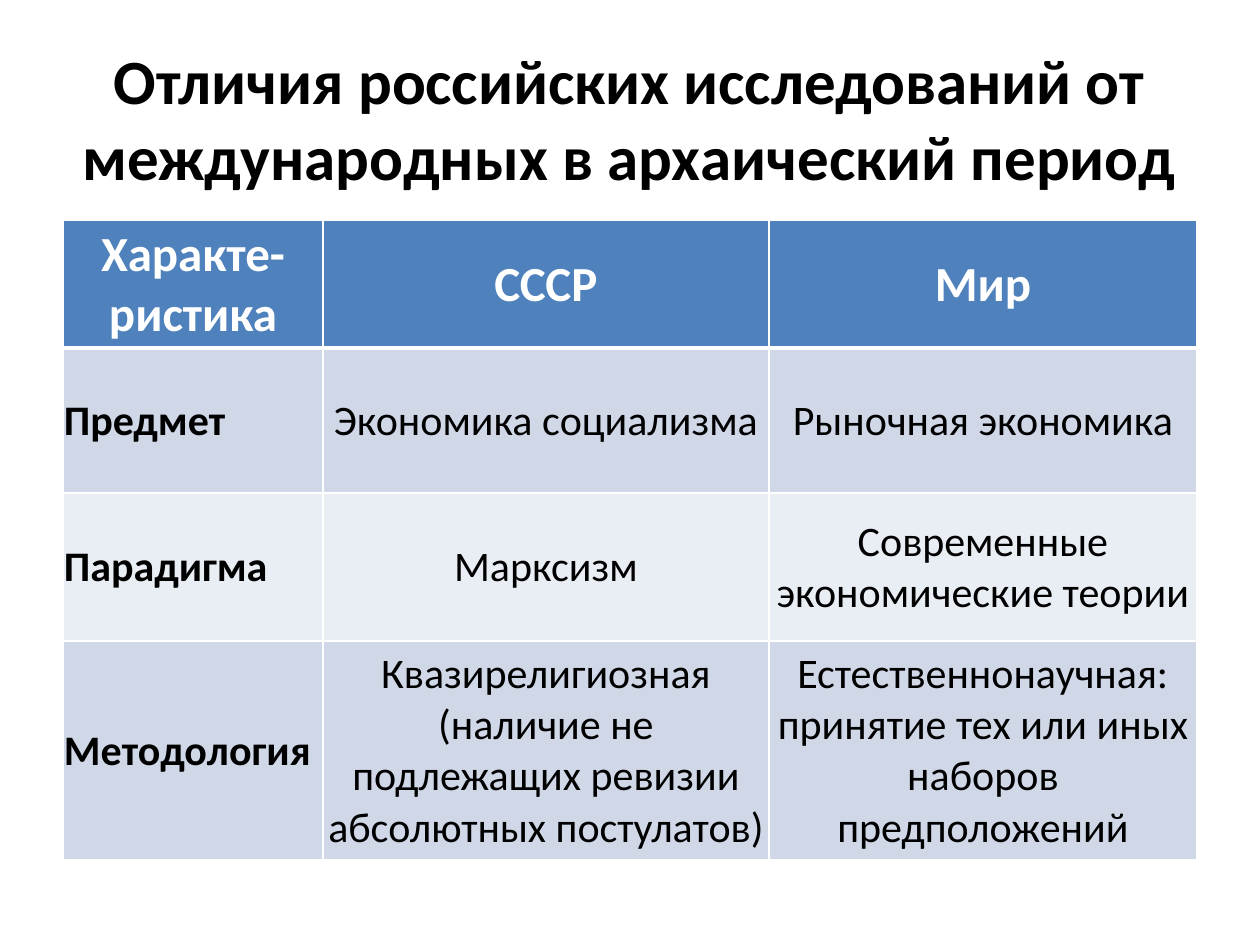
from dataclasses import dataclass

from lxml import etree
from pptx import Presentation
from pptx import util as u
from pptx.dml.color import RGBColor
from pptx.enum import text as t
from pptx.oxml import ns

DPI = 126


@dataclass(frozen=True)
class Theme:
    font: str = "Calibri"
    white: str = "FFFFFF"
    black: str = "000000"
    head: str = "4F81BD"
    odd: str = "D0D8E8"
    even: str = "E9EDF4"
    title: int = 36
    top: int = 28
    body: int = 24


@dataclass(frozen=True)
class Row:
    height: int
    texts: tuple[str, ...]


THEME = Theme()
TITLE = "Отличия российских исследований от международных в архаический период"
COLS = (260, 446, 428)
ROWS = (
    Row(128, ("Характе-ристика", "СССР", "Мир")),
    Row(145, ("Предмет", "Экономика социализма", "Рыночная экономика")),
    Row(148, ("Парадигма", "Марксизм", "Современные экономические теории")),
    Row(219, (
        "Методология",
        "Квазирелигиозная (наличие не подлежащих ревизии абсолютных постулатов)",
        "Естественнонаучная: принятие тех или иных наборов предположений",
    )),
)


def px(num: int) -> u.Emu:
    return u.Emu(round(num * 914400 / DPI))


def write(frame, words: str, *, size: int, color: str = THEME.black,
          bold: bool = False, center: bool = True) -> None:
    frame.word_wrap = True
    para = frame.paragraphs[0]
    para.alignment = t.PP_ALIGN.CENTER if center else t.PP_ALIGN.LEFT
    run = para.add_run()
    run.text = words
    font = run.font
    font.name, font.size, font.bold = THEME.font, u.Pt(size), bold
    font.color.rgb = RGBColor.from_string(color)


def edge(cell, low: int) -> None:
    """Draw white cell borders, with the bottom one low points wide."""
    props = cell._tc.get_or_add_tcPr()
    sides = {"lnL": 1, "lnR": 1, "lnT": 1, "lnB": low}
    for spot, (side, width) in enumerate(sides.items()):
        line = etree.Element(ns.qn(f"a:{side}"), w=str(u.Pt(width)))
        fill = etree.SubElement(line, ns.qn("a:solidFill"))
        etree.SubElement(fill, ns.qn("a:srgbClr"), val=THEME.white)
        props.insert(spot, line)


def paint(cell, color: str) -> None:
    cell.fill.solid()
    cell.fill.fore_color.rgb = RGBColor.from_string(color)
    cell.vertical_anchor = t.MSO_ANCHOR.MIDDLE
    cell.margin_left = cell.margin_right = cell.margin_top = px(1)
    cell.margin_bottom = 0


def draw_title(slide) -> None:
    box = slide.shapes.add_textbox(px(44), px(38), px(1171), px(158))
    box.text_frame.vertical_anchor = t.MSO_ANCHOR.MIDDLE
    write(box.text_frame, TITLE, size=THEME.title, bold=True)


def draw_table(slide) -> None:
    high = sum(row.height for row in ROWS)
    grid = slide.shapes.add_table(len(ROWS), len(COLS), px(63), px(220),
                                  px(sum(COLS)), px(high)).table
    for col, width in zip(grid.columns, COLS):
        col.width = px(width)
    for r, row in enumerate(ROWS):
        head = r == 0
        grid.rows[r].height = px(row.height)
        fill = THEME.head if head else THEME.odd if r % 2 else THEME.even
        for c, words in enumerate(row.texts):
            cell = grid.cell(r, c)
            paint(cell, fill)
            edge(cell, 3 if head else 1)
            write(cell.text_frame, words,
                  size=THEME.top if head else THEME.body,
                  color=THEME.white if head else THEME.black,
                  bold=head or c == 0, center=head or c > 0)


def main() -> None:
    deck = Presentation()
    deck.slide_width, deck.slide_height = px(1260), px(945)
    slide = deck.slides.add_slide(deck.slide_layouts[6])
    draw_title(slide)
    draw_table(slide)
    deck.save("out.pptx")


if __name__ == "__main__":
    main()
